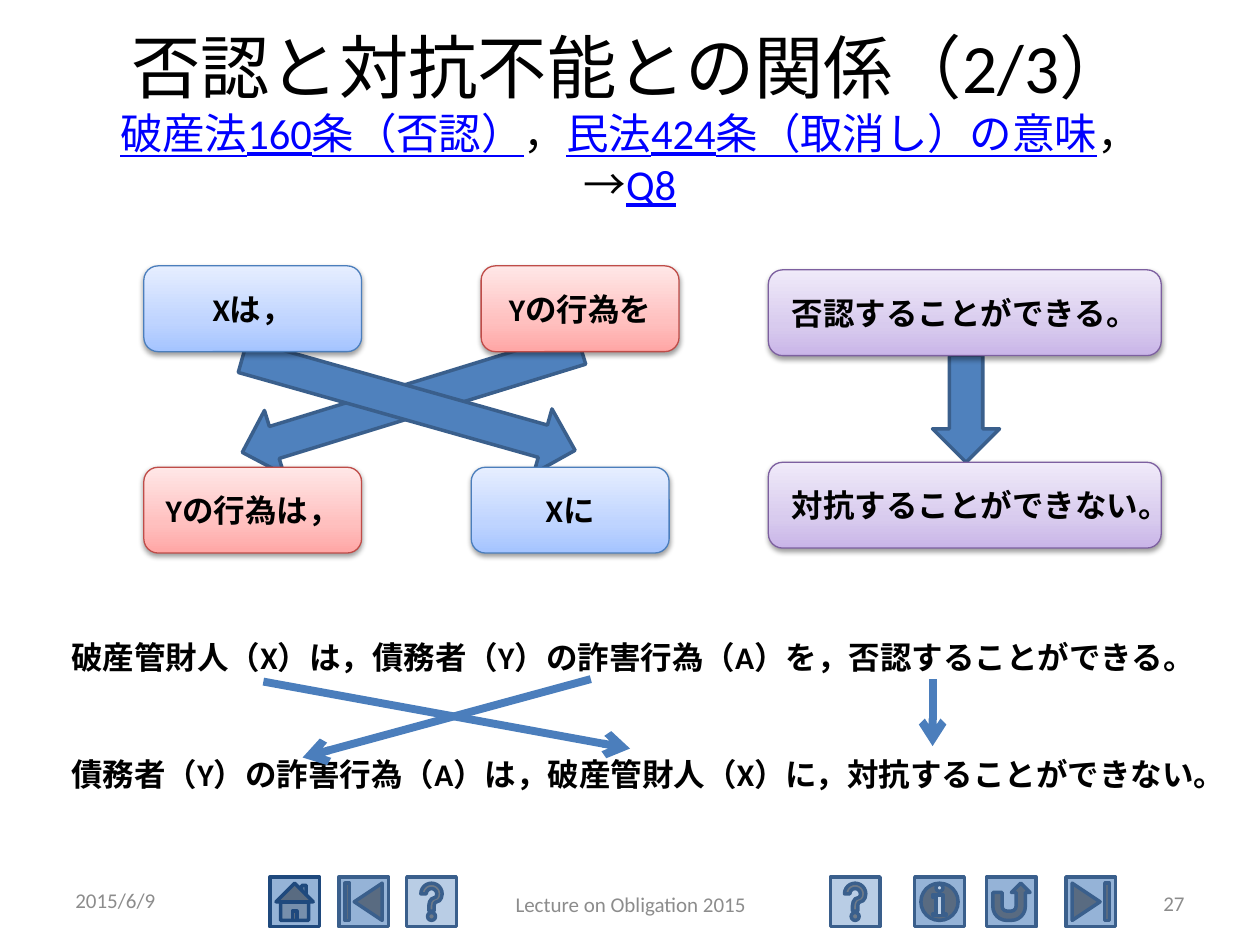
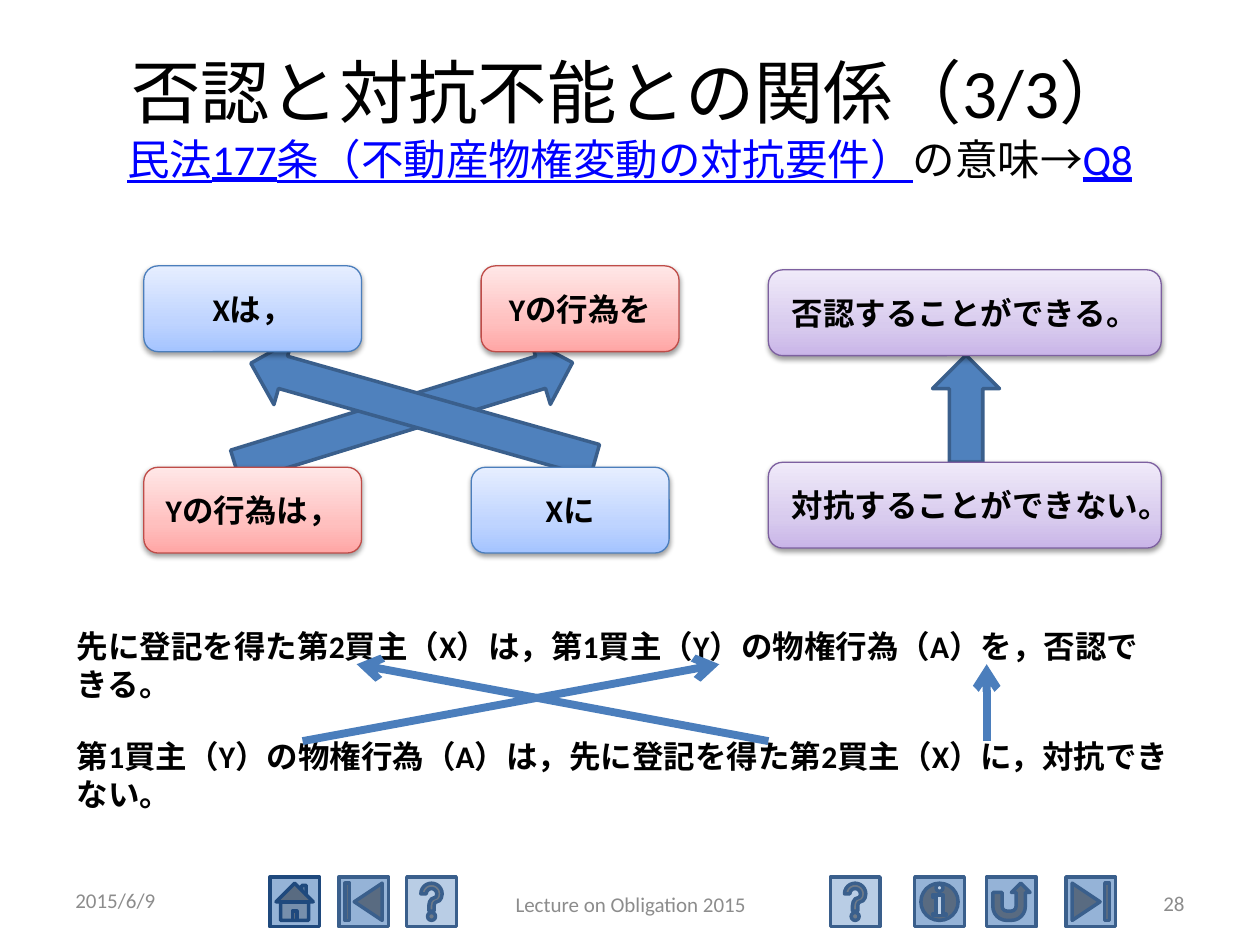
import copy

import pptx
import pptx.dml.color
import pptx.enum.lang
import pptx.enum.shapes
import pptx.enum.text
import pptx.oxml
import pptx.oxml.ns
import pptx.util
from lxml import etree

Cm = pptx.util.Cm
Pt = pptx.util.Pt
qn = pptx.oxml.ns.qn
MSO = pptx.enum.shapes.MSO_SHAPE
ALIGN = pptx.enum.text.PP_ALIGN
ANCHOR = pptx.enum.text.MSO_ANCHOR


def rgb(hex_color):
    return pptx.dml.color.RGBColor.from_string(hex_color)


def write(sp, text, size=18, color="000000", bold=False, underline=False,
          align=ALIGN.LEFT, anchor=ANCHOR.MIDDLE):
    """Append one run to the first paragraph of a shape."""
    tf = sp.text_frame
    tf.word_wrap = True
    tf.vertical_anchor = anchor
    p = tf.paragraphs[0]
    p.alignment = align
    r = p.add_run()
    r.text = text
    r.font.name = "Calibri"
    r.font.size = Pt(size)
    r.font.bold = bold
    r.font.underline = underline
    r.font.color.rgb = rgb(color)
    r.font.language_id = pptx.enum.lang.MSO_LANGUAGE_ID.JAPANESE


# Shared colours: box styles are an outline and a gradient from bottom to top
BLOCK, BLOCK_EDGE, LINE = "4F81BD", "3A5F8C", "4B7EBC"
LINK, GREY = "0000FF", "8C8C8C"
BLUE = ("4B7EBC", ["A4C4FF", "BFD4FF", "E6EEFF"])
RED = ("BF4C48", ["FFA6A5", "FFC0BF", "FFE7E7"])
PURPLE = ("7D60A0", ["C9B5E8", "D8CBEE", "F0EAF9"])

# Shared navigation buttons: preset, left, fill, outline
BUTTONS = [
    (MSO.ACTION_BUTTON_BEGINNING, 6.83, "95B3D7", BLOCK_EDGE),
    (MSO.ACTION_BUTTON_END, 21.49, "95B3D7", BLOCK_EDGE),
    (MSO.ACTION_BUTTON_RETURN, 19.89, "95B3D7", BLOCK_EDGE),
    (MSO.ACTION_BUTTON_HOME, 5.44, "95B3D7", "1F497D"),
    (MSO.ACTION_BUTTON_INFORMATION, 18.44, "95B3D7", BLOCK_EDGE),
    (MSO.ACTION_BUTTON_HELP, 8.2, "B9CDE5", BLOCK_EDGE),
    (MSO.ACTION_BUTTON_HELP, 16.74, "B9CDE5", BLOCK_EDGE),
]

# Shared boxes: text, left, top, width, style
BOXES = [
    ("Xは，", 2.9, 5.36, 4.39, BLUE),
    ("Yの行為を", 9.7, 5.36, 3.99, RED),
    ("否認することができる。", 15.49, 5.44, 7.92, PURPLE),
    ("Yの行為は，", 2.9, 9.42, 4.39, RED),
    ("Xに", 9.5, 9.42, 3.99, BLUE),
    ("対抗することができない。", 15.49, 9.32, 7.92, PURPLE),
]

SLIDES = [
    {
        "number": "27",
        "heading": "否認と対抗不能との関係（2/3）",
        "subtitle": [("破産法160条（否認）", True), ("，", False),
                     ("民法424条（取消し）の意味", True), ("，→", False),
                     ("Q8", True)],
        "upward": False,
        # left, top, height, rotation
        "blocks": [(7.62, 4.5, 7.14, 72.9), (7.57, 4.65, 6.96, 285.8),
                   (18.8, 7.16, 2.16, 0)],
        "left": 1.19, "width": 23.5,
        "sentences": [
            (12.73, "破産管財人（X）は，債務者（Y）の詐害行為（A）を，否認することができる。"),
            (15.09, "債務者（Y）の詐害行為（A）は，破産管財人（X）に，対抗することができない。"),
        ],
        "arrows": [(11.91, 13.69, 6.1, 15.27), (5.31, 13.74, 12.7, 15.09),
                   (18.8, 13.69, 18.8, 15.04)],
    },
    {
        "number": "28",
        "heading": "否認と対抗不能との関係（3/3）",
        "subtitle": [("民法177条（不動産物権変動の対抗要件）", True),
                     ("の意味→", False), ("Q8", True)],
        "upward": True,
        "blocks": [(7.47, 4.8, 7.11, 72.9), (7.85, 4.7, 7.21, 285.8),
                   (18.8, 7.16, 2.16, 0)],
        "left": 1.3, "width": 22.5,
        "sentences": [
            (12.52, "先に登記を得た第2買主（X）は，第1買主（Y）の物権行為（A）を，否認できる。"),
            (14.73, "第1買主（Y）の物権行為（A）は，先に登記を得た第2買主（X）に，対抗できない。"),
        ],
        "arrows": [(15.49, 14.94, 7.19, 13.39), (6.1, 14.94, 14.5, 13.39),
                   (19.89, 14.94, 19.89, 13.39)],
    },
]

prs = pptx.Presentation()
prs.slide_width, prs.slide_height = Cm(25.4), Cm(19.05)

for content in SLIDES:
    shapes = prs.slides.add_slide(prs.slide_layouts[6]).shapes

    # Navigation buttons
    for preset, left, fill, edge in BUTTONS:
        sp = shapes.add_shape(preset, Cm(left), Cm(17.68), Cm(1), Cm(1))
        sp.shadow.inherit = False
        sp.fill.solid()
        sp.fill.fore_color.rgb = rgb(fill)
        sp.line.color.rgb = rgb(edge)
        sp.line.width = Pt(2)

    # Title with its smaller second line
    sp = shapes.add_textbox(Cm(1.27), Cm(0.76), Cm(22.86), Cm(3.18))
    write(sp, content["heading"], size=39.6, align=ALIGN.CENTER)
    sp.text_frame.paragraphs[0].add_line_break()
    for text, linked in content["subtitle"]:
        write(sp, text, size=24.3, color=LINK if linked else "000000",
              underline=linked, align=ALIGN.CENTER)

    # Date, footer and slide number
    for text, left, top, width, align in [
            ("2015/6/9", 1.27, 17.65, 5.92, ALIGN.LEFT),
            ("Lecture on Obligation 2015", 8.69, 17.73, 8.05, ALIGN.CENTER),
            (content["number"], 18.21, 17.7, 5.92, ALIGN.RIGHT)]:
        sp = shapes.add_textbox(Cm(left), Cm(top), Cm(width), Cm(1.01))
        write(sp, text, size=12, color=GREY, align=align)

    # Block arrows between the boxes
    for left, top, height, rotation in content["blocks"]:
        sp = shapes.add_shape(MSO.DOWN_ARROW, Cm(left), Cm(top), Cm(1.35), Cm(height))
        sp.rotation = rotation
        if content["upward"]:
            sp._element.spPr.get_or_add_xfrm().set("flipV", "1")
        sp.shadow.inherit = False
        sp.fill.solid()
        sp.fill.fore_color.rgb = rgb(BLOCK)
        sp.line.color.rgb = rgb(BLOCK_EDGE)
        sp.line.width = Pt(2)

    # Example sentences
    for top, text in content["sentences"]:
        sp = shapes.add_textbox(Cm(content["left"]), Cm(top),
                                Cm(content["width"]), Cm(1.01))
        write(sp, text, bold=True, anchor=ANCHOR.TOP)
        sp.text_frame.auto_size = pptx.enum.text.MSO_AUTO_SIZE.SHAPE_TO_FIT_TEXT

    # Line arrows between the sentences
    for ends in content["arrows"]:
        sp = shapes.add_connector(pptx.enum.shapes.MSO_CONNECTOR.STRAIGHT,
                                  *map(Cm, ends))
        sp.line.color.rgb = rgb(LINE)
        sp.line.width = Pt(4.5)
        etree.SubElement(sp.line._get_or_add_ln(), qn("a:tailEnd"), type="arrow")
        etree.SubElement(sp._element.spPr, qn("a:effectLst"))

    # Gradient boxes with a soft shadow
    for text, left, top, width, (edge, stops) in BOXES:
        sp = shapes.add_shape(MSO.ROUNDED_RECTANGLE, Cm(left), Cm(top),
                              Cm(width), Cm(1.73))
        sp.fill.gradient()
        sp.fill.gradient_angle = 90
        spPr = sp._element.spPr
        gsLst = spPr.find(".//" + qn("a:gsLst"))
        gsLst.insert(1, copy.deepcopy(gsLst[0]))
        for stop, position, color in zip(sp.fill.gradient_stops, (0, 0.35, 1), stops):
            stop.position = position
            stop.color.rgb = rgb(color)
        sp.line.color.rgb = rgb(edge)
        sp.line.width = Pt(0.75)
        sp.shadow.inherit = False
        shadow = etree.SubElement(spPr.find(qn("a:effectLst")), qn("a:outerShdw"),
                                  blurRad=str(Pt(3.1)), dist=str(Pt(1.6)),
                                  dir="5400000", rotWithShape="0")
        black = etree.SubElement(shadow, qn("a:srgbClr"), val="000000")
        etree.SubElement(black, qn("a:alpha"), val="38000")
        write(sp, text, bold=True, align=ALIGN.CENTER)

prs.save("out.pptx")
